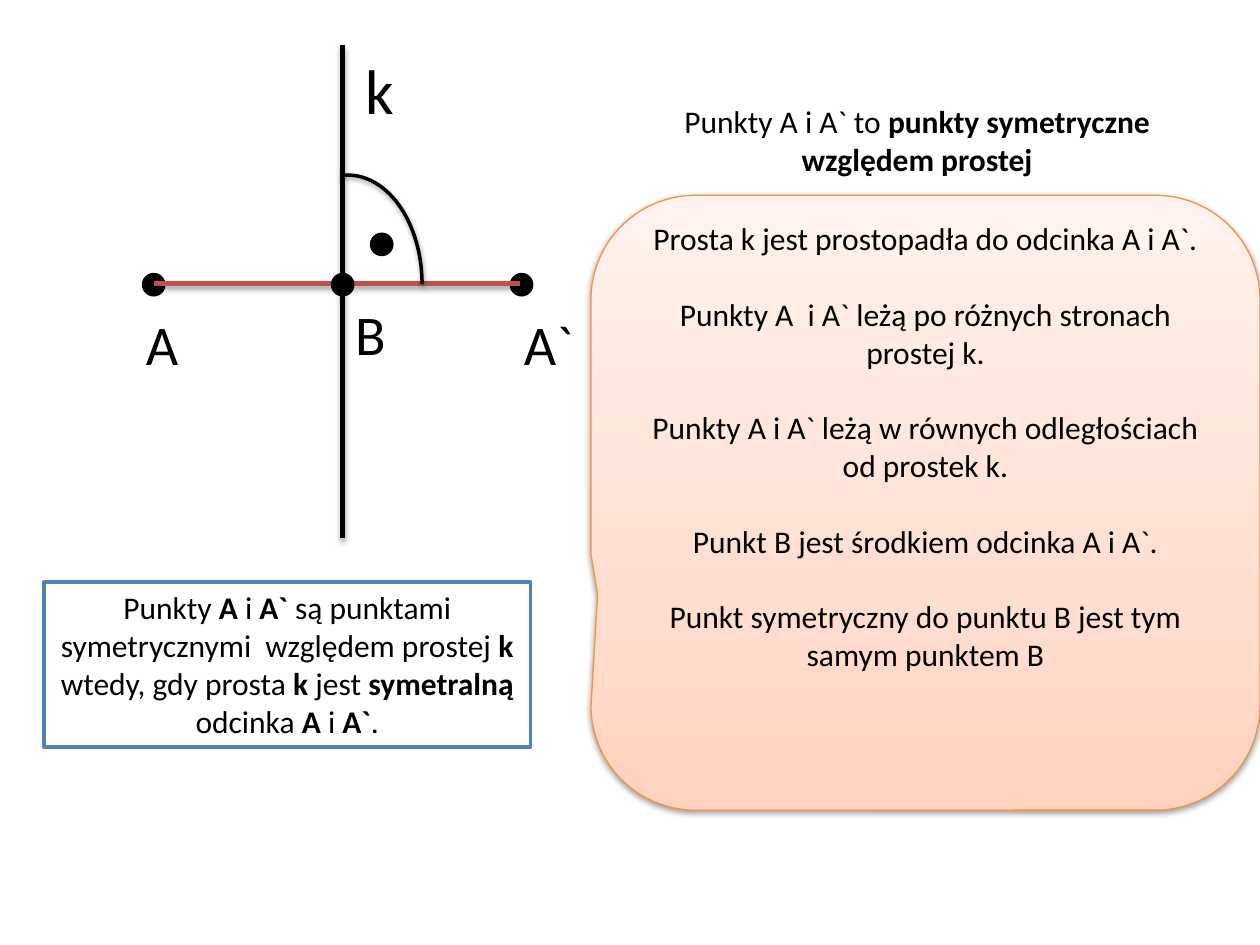
import copy
from dataclasses import dataclass

import pptx
import pptx.dml.color
import pptx.enum.shapes
import pptx.enum.text
import pptx.oxml
import pptx.oxml.ns
import pptx.util
from pptx.util import Inches

SHAPE = pptx.enum.shapes.MSO_SHAPE
ALIGN = pptx.enum.text.PP_ALIGN
BLACK = "000000"
DOT_SIZE = 0.16
BODY_SIZE = 18


@dataclass
class Label:
    text: str
    left: float
    top: float
    width: float
    height: float
    size: int = 32


@dataclass
class Span:
    text: str
    bold: bool = False


def colour(value: str):
    return pptx.dml.color.RGBColor.from_string(value)


def set_line(shape, value: str, width: float) -> None:
    shape.line.color.rgb = colour(value)
    shape.line.width = pptx.util.Pt(width)


def add_shadow(shape, distance: float, opacity: int) -> None:
    """Give the shape a soft shadow falling straight down."""
    unit = 12700
    properties = shape._element.spPr
    for old in properties.findall(pptx.oxml.ns.qn("a:effectLst")):
        properties.remove(old)
    properties.append(pptx.oxml.parse_xml(
        f'<a:effectLst {pptx.oxml.ns.nsdecls("a")}>'
        f'<a:outerShdw blurRad="{round(3.1 * unit)}" dist="{round(distance * unit)}" '
        f'dir="5400000" rotWithShape="0"><a:srgbClr val="{BLACK}">'
        f'<a:alpha val="{opacity * 1000}"/></a:srgbClr></a:outerShdw></a:effectLst>'))


def add_line(page, x1: float, y1: float, x2: float, y2: float, value: str) -> None:
    line = page.shapes.add_connector(
        pptx.enum.shapes.MSO_CONNECTOR.STRAIGHT,
        Inches(x1), Inches(y1), Inches(x2), Inches(y2))
    set_line(line, value, 3)
    add_shadow(line, 1.8, 35)


def add_shape(page, kind, left: float, top: float, width: float, height: float,
              line: str, line_width: float, fill: str | None = None):
    shape = page.shapes.add_shape(
        kind, Inches(left), Inches(top), Inches(width), Inches(height))
    shape.shadow.inherit = False
    set_line(shape, line, line_width)
    if fill:
        shape.fill.solid()
        shape.fill.fore_color.rgb = colour(fill)
    else:
        shape.fill.background()
    return shape


def add_dot(page, left: float, top: float) -> None:
    add_shape(page, SHAPE.OVAL, left, top, DOT_SIZE, DOT_SIZE, BLACK, 2, BLACK)


def write_spans(para, spans: list[Span], size: int, align) -> None:
    para.alignment = align
    for span in spans:
        run = para.add_run()
        run.text = span.text
        run.font.name = "Calibri"
        run.font.size = pptx.util.Pt(size)
        run.font.bold = span.bold
        run.font.color.rgb = colour(BLACK)


def add_text(page, left: float, top: float, width: float, height: float,
             spans: list[Span], size: int, align):
    box = page.shapes.add_textbox(
        Inches(left), Inches(top), Inches(width), Inches(height))
    box.text_frame.word_wrap = True
    write_spans(box.text_frame.paragraphs[0], spans, size, align)
    return box


def add_label(page, label: Label) -> None:
    add_text(page, label.left, label.top, label.width, label.height,
             [Span(label.text)], label.size, ALIGN.LEFT)


def set_gradient(shape, stops: list[tuple[float, str]]) -> None:
    """Fill from bottom to top through three stops."""
    shape.fill.gradient()
    shape.fill.gradient_angle = 90
    stop_list = shape._element.spPr.find(".//" + pptx.oxml.ns.qn("a:gsLst"))
    stop_list.append(copy.deepcopy(stop_list[-1]))
    for stop, (position, value) in zip(shape.fill.gradient_stops, stops):
        stop.position = position
        stop.color.rgb = colour(value)


def add_properties_callout(page, sentences: list[str]) -> None:
    callout = add_shape(page, SHAPE.ROUNDED_RECTANGULAR_CALLOUT,
                        4.69, 1.55, 5.31, 4.88, "F69240", 0.75)
    for index, value in enumerate((-0.49, 0.15, 0.17)):
        callout.adjustments[index] = value
    set_gradient(callout, [(0, "FFD2BD"), (0.35, "FFDED0"), (1, "FFF2ED")])
    add_shadow(callout, 1.6, 38)
    frame = callout.text_frame
    frame.word_wrap = True
    frame.vertical_anchor = pptx.enum.text.MSO_ANCHOR.MIDDLE
    frame.margin_bottom = Inches(0.95)
    for index, sentence in enumerate(sentences):
        para = frame.add_paragraph() if index else frame.paragraphs[0]
        if index:
            para.space_before = pptx.util.Pt(21.6)
        write_spans(para, [Span(sentence)], BODY_SIZE, ALIGN.CENTER)


def main() -> None:
    deck = pptx.Presentation()
    deck.slide_width, deck.slide_height = Inches(10), Inches(7.5)
    page = deck.slides.add_slide(deck.slide_layouts[6])

    # Axis k, the end points and the segment between them
    add_line(page, 2.72, 0.36, 2.72, 4.27, BLACK)
    for left in (1.14, 4.06):
        add_dot(page, left, 2.18)
    add_line(page, 1.22, 2.25, 4.13, 2.25, "C0504D")

    # Right angle mark and midpoint B
    arc = add_shape(page, SHAPE.ARC, 2.17, 1.39, 1.18, 1.73, BLACK, 2)
    arc.adjustments[0] = 160.03
    arc.adjustments[1] = 0
    add_shadow(arc, 1.6, 38)
    add_dot(page, 2.95, 1.86)
    add_dot(page, 2.64, 2.18)

    # Names of the points and the axis
    for label in (
        Label("A", 1.06, 2.41, 0.47, 0.64),
        Label("A`", 4.06, 2.41, 0.71, 0.64),
        Label("k", 2.8, 0.36, 0.31, 0.71, 36),
        Label("B", 2.72, 2.33, 0.47, 0.64),
    ):
        add_label(page, label)

    # Heading and properties
    add_text(page, 5.31, 0.76, 3.94, 0.71,
             [Span("Punkty A i A` to "),
              Span("punkty symetryczne względem prostej", True)],
             BODY_SIZE, ALIGN.CENTER)
    add_properties_callout(page, [
        "Prosta k jest prostopadła do odcinka A i A`.",
        "Punkty A  i A` leżą po różnych stronach prostej k.",
        "Punkty A i A` leżą w równych odległościach od prostek k.",
        "Punkt B jest środkiem odcinka A i A`.",
        "Punkt symetryczny do punktu B jest tym samym punktem B",
    ])

    # Definition: plain and bold spans alternate
    pieces = ["Punkty ", "A", " i ", "A` ",
              "są punktami symetrycznymi  względem prostej ", "k",
              " wtedy, gdy prosta ", "k", " jest", " symetralną ",
              "odcinka ", "A", " i ", "A`", "."]
    definition = add_text(
        page, 0.35, 4.62, 3.86, 1.31,
        [Span(piece, index % 2 == 1) for index, piece in enumerate(pieces)],
        BODY_SIZE, ALIGN.CENTER)
    definition.fill.solid()
    definition.fill.fore_color.rgb = colour("FFFFFF")
    set_line(definition, "4F81BD", 2)

    deck.save("out.pptx")


if __name__ == "__main__":
    main()
